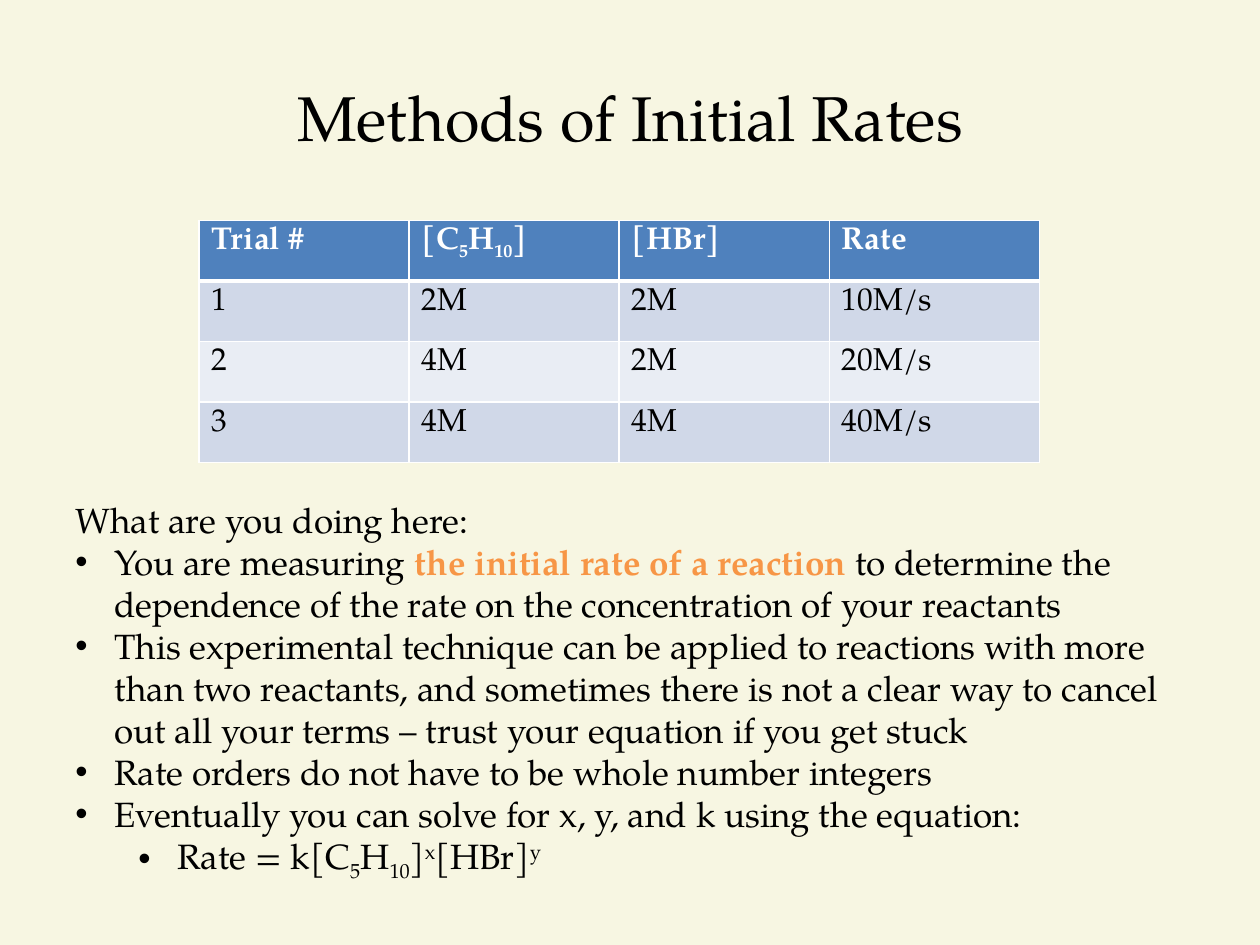
from dataclasses import dataclass

from lxml import etree
from pptx import Presentation
from pptx.dml.color import RGBColor
from pptx.enum.text import MSO_ANCHOR, MSO_AUTO_SIZE, PP_ALIGN
from pptx.oxml.ns import qn
from pptx.util import Inches, Pt

CENTER = PP_ALIGN.CENTER
MIDDLE = MSO_ANCHOR.MIDDLE
FIT_SHAPE = MSO_AUTO_SIZE.SHAPE_TO_FIT_TEXT
TITLE_ONLY = 5
SUB, SUPER = -25, 30


@dataclass(frozen=True)
class Theme:
    font: str = "TeX Gyre Pagella"
    background: str = "F7F6E2"
    text: str = "000000"
    accent: str = "F79646"
    header_text: str = "FFFFFF"
    header_fill: str = "4F81BD"
    bands: tuple = ("D0D8E8", "E9EDF4")
    border: str = "FFFFFF"
    title_size: int = 36
    table_size: int = 18
    body_size: int = 20


theme = Theme()


def add_runs(paragraph, runs, size, color, bold=False):
    """Add runs given as (text, baseline shift in percent, is accented)."""
    for text, baseline, accented in runs:
        run = paragraph.add_run()
        run.text = text
        run.font.name = theme.font
        run.font.size = Pt(size)
        run.font.bold = bold or accented
        run.font.color.rgb = RGBColor.from_string(theme.accent if accented else color)
        if baseline:
            run.font._element.set("baseline", str(baseline * 1000))


def add_border(cell, side, width):
    line = etree.SubElement(cell._tc.get_or_add_tcPr(), qn(f"a:ln{side}"), w=str(Pt(width)))
    fill = etree.SubElement(line, qn("a:solidFill"))
    etree.SubElement(fill, qn("a:srgbClr"), val=theme.border)


presentation = Presentation()
presentation.slide_width = Inches(10)
presentation.slide_height = Inches(7.5)
slide = presentation.slides.add_slide(presentation.slide_layouts[TITLE_ONLY])
slide.background.fill.solid()
slide.background.fill.fore_color.rgb = RGBColor.from_string(theme.background)

# Title
title = slide.shapes.title
title.left, title.top = Inches(0.5), Inches(0.3)
title.width, title.height = Inches(9), Inches(1.25)
title.text_frame.vertical_anchor = MIDDLE
title_paragraph = title.text_frame.paragraphs[0]
title_paragraph.alignment = CENTER
add_runs(title_paragraph, [("Methods of Initial Rates", 0, False)], theme.title_size, theme.text)

# Trial table
pentene = [("[C", 0, False), ("5", SUB, False), ("H", 0, False), ("10", SUB, False), ("]", 0, False)]
trials = [
    ["Trial #", pentene, "[HBr]", "Rate"],
    ["1", "2M", "2M", "10M/s"],
    ["2", "4M", "2M", "20M/s"],
    ["3", "4M", "4M", "40M/s"],
]
table = slide.shapes.add_table(
    len(trials), len(trials[0]), Inches(1.58), Inches(1.75), Inches(6.67), Inches(1.92)
).table
for row_index, values in enumerate(trials):
    is_header = row_index == 0
    row_fill = theme.header_fill if is_header else theme.bands[(row_index - 1) % 2]
    row_text = theme.header_text if is_header else theme.text
    for column_index, value in enumerate(values):
        cell = table.cell(row_index, column_index)
        runs = [(value, 0, False)] if isinstance(value, str) else value
        add_runs(cell.text_frame.paragraphs[0], runs, theme.table_size, row_text, is_header)
        for side in "LRTB":
            header_rule = (row_index, side) in ((0, "B"), (1, "T"))
            add_border(cell, side, 3 if header_rule else 1)
        cell.fill.solid()
        cell.fill.fore_color.rgb = RGBColor.from_string(row_fill)

# Explanation: (level, runs), where level None has no bullet
explanation = [
    (None, [("What are you doing here:", 0, False)]),
    (0, [
        ("You are measuring ", 0, False),
        ("the initial rate of a reaction ", 0, True),
        ("to determine the dependence of the rate on the concentration of your reactants", 0, False),
    ]),
    (0, [(
        "This experimental technique can be applied to reactions with more than two reactants, "
        "and sometimes there is not a clear way to cancel out all your terms – "
        "trust your equation if you get stuck", 0, False,
    )]),
    (0, [("Rate orders do not have to be whole number integers", 0, False)]),
    (0, [("Eventually you can solve for x, y, and k using the equation:", 0, False)]),
    (1, [("Rate = k", 0, False), *pentene, ("x", SUPER, False), ("[HBr]", 0, False), ("y", SUPER, False)]),
]
text_box = slide.shapes.add_textbox(Inches(0.5), Inches(3.91), Inches(9), Inches(3.13))
text_frame = text_box.text_frame
text_frame.word_wrap = True
text_frame.auto_size = FIT_SHAPE
for index, (level, runs) in enumerate(explanation):
    paragraph = text_frame.add_paragraph() if index else text_frame.paragraphs[0]
    if level is not None:
        paragraph.level = level
        properties = paragraph._p.get_or_add_pPr()
        properties.set("marL", str(Inches(0.31 + 0.5 * level)))
        properties.set("indent", str(Inches(-0.31)))
        etree.SubElement(properties, qn("a:buFont"), typeface="Arial")
        etree.SubElement(properties, qn("a:buChar"), char="•")
    add_runs(paragraph, runs, theme.body_size, theme.text)

presentation.save("out.pptx")
